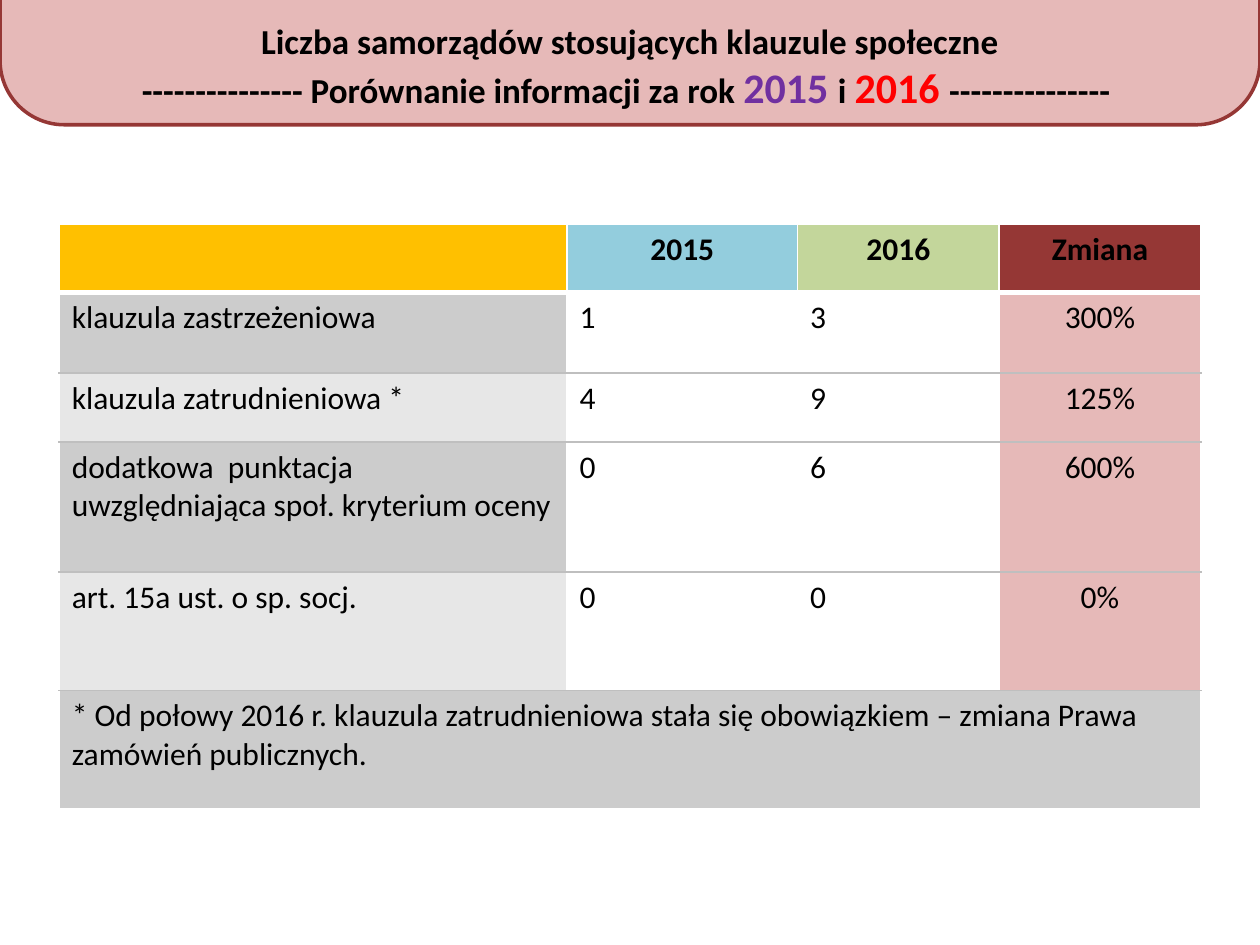
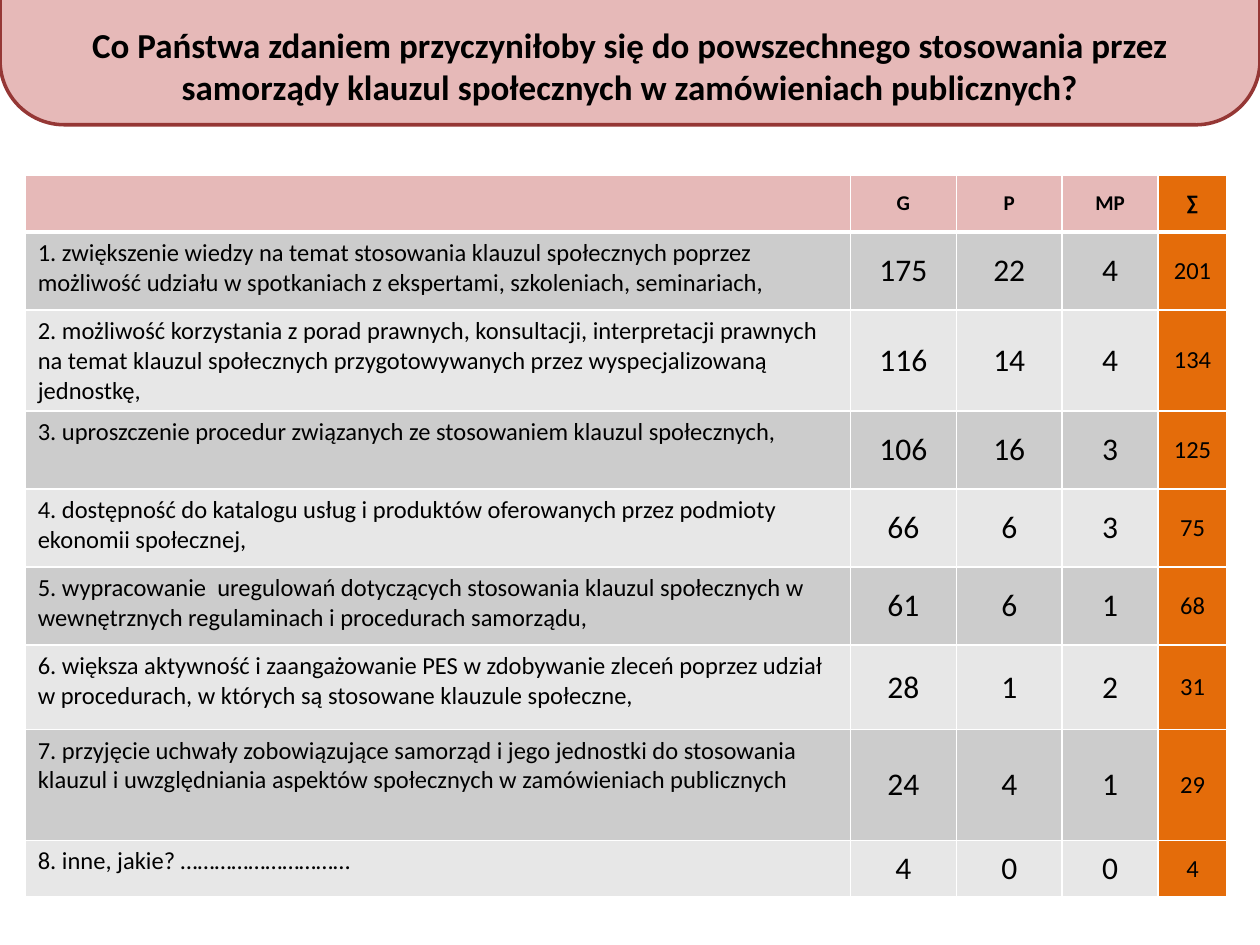
from dataclasses import dataclass

from lxml import etree
from pptx import Presentation
from pptx.dml import color
from pptx.enum import shapes, text
from pptx.oxml import ns
from pptx.util import Inches, Pt


@dataclass(frozen=True)
class Theme:
    font: str = "Calibri"
    ink: str = "000000"
    white: str = "FFFFFF"
    pink: str = "E6B9B8"
    maroon: str = "953735"
    amber: str = "FFC000"
    blue: str = "93CDDD"
    green: str = "C3D69B"
    orange: str = "E46C0A"
    purple: str = "7030A0"
    red: str = "FF0000"
    rule: str = "BFBFBF"
    bands: tuple = ("CCCCCC", "E7E7E7")
    title: int = 20
    year: int = 24
    figure: int = 18
    item: int = 14
    heading: int = 12


T = Theme()
CENTER = text.PP_ALIGN.CENTER
LEFT = text.PP_ALIGN.LEFT
MIDDLE = text.MSO_ANCHOR.MIDDLE
TOP = text.MSO_ANCHOR.TOP


def rgb(value):
    return color.RGBColor.from_string(value)


def style_run(r, size, ink=T.ink, bold=False):
    r.font.name = T.font
    r.font.size = Pt(size)
    r.font.bold = bold
    r.font.color.rgb = rgb(ink)


def set_borders(cell, **edges):
    """Each edge (L, R, T, B) is a (colour, points) pair."""
    tc_pr = cell._tc.get_or_add_tcPr()
    ordered = [side for side in "LRTB" if side in edges]
    for i, side in enumerate(ordered):
        ink, width = edges[side]
        ln = etree.Element(ns.qn(f"a:ln{side}"), w=str(Pt(width)))
        fill = etree.SubElement(ln, ns.qn("a:solidFill"))
        etree.SubElement(fill, ns.qn("a:srgbClr"), val=ink)
        tc_pr.insert(i, ln)


def fill_cell(cell, value, size, fill, align=LEFT, anchor=TOP, bold=False):
    cell.text = value
    cell.vertical_anchor = anchor
    cell.fill.solid()
    cell.fill.fore_color.rgb = rgb(fill)
    p = cell.text_frame.paragraphs[0]
    p.alignment = align
    for r in p.runs:
        style_run(r, size, bold=bold)


def add_table(s, box, cols, rows):
    x, y, w, h = (Inches(v) for v in box)
    tbl = s.shapes.add_table(len(rows), len(cols), x, y, w, h).table
    tbl.horz_banding = False
    for col, width in zip(tbl.columns, cols):
        col.width = Inches(width)
    for row, height in zip(tbl.rows, rows):
        row.height = Inches(height)
    return tbl


def header_band(s, box):
    x, y, w, h = (Inches(v) for v in box)
    sp = s.shapes.add_shape(shapes.MSO_SHAPE.ROUND_2_SAME_RECTANGLE, x, y, w, h)
    sp.adjustments[0] = 0.5
    sp.adjustments[1] = 0
    sp.rotation = 180
    sp.shadow.inherit = False
    sp.fill.solid()
    sp.fill.fore_color.rgb = rgb(T.pink)
    sp.line.color.rgb = rgb(T.maroon)
    sp.line.width = Pt(2)


def slide_title(s, box, lines):
    """Each line is a list of (text, size, colour) parts."""
    tf = s.shapes.add_textbox(*(Inches(v) for v in box)).text_frame
    tf.word_wrap = True
    tf.vertical_anchor = MIDDLE
    p = tf.paragraphs[0]
    p.alignment = CENTER
    for i, line in enumerate(lines):
        if i:
            p.add_line_break()
        for part, size, ink in line:
            r = p.add_run()
            r.text = part
            style_run(r, size, ink, bold=True)


def titled_slide(prs, lines):
    s = prs.slides.add_slide(prs.slide_layouts[6])
    header_band(s, (0, -0.03, 10, 1.02))
    slide_title(s, (0.5, -0.03, 9, 1.1), lines)
    return s


def comparison_table(s, box):
    headings = [("", T.amber), ("2015", T.blue), ("2016", T.green), ("Zmiana", T.maroon)]
    clauses = [
        ("klauzula zastrzeżeniowa", "1", "3", "300%"),
        ("klauzula zatrudnieniowa *", "4", "9", "125%"),
        ("dodatkowa  punktacja uwzględniająca społ. kryterium oceny", "0", "6", "600%"),
        ("art. 15a ust. o sp. socj.", "0", "0", "0%"),
    ]
    footnote = ("* Od połowy 2016 r. klauzula zatrudnieniowa stała się obowiązkiem"
                " – zmiana Prawa zamówień publicznych.")
    tbl = add_table(s, box, (4.03, 1.83, 1.6, 1.6), (0.54, 0.64, 0.55, 1.03, 0.94, 0.94))
    thin, thick, grey = (T.white, 1), (T.white, 3), (T.rule, 1)

    # Headings
    for c, (heading, fill) in enumerate(headings):
        cell = tbl.cell(0, c)
        fill_cell(cell, heading, T.figure, fill, CENTER, bold=True)
        set_borders(cell, L=thin, R=thin, T=thin, B=thick)

    # Clauses
    for n, clause in enumerate(clauses):
        fills = (T.bands[n % 2], T.white, T.white, T.pink)
        for c, (value, fill) in enumerate(zip(clause, fills)):
            cell = tbl.cell(n + 1, c)
            fill_cell(cell, value, T.figure, fill, CENTER if c == 3 else LEFT)
            set_borders(cell, T=grey if n else thick, B=grey)

    # Footnote across all columns
    last = len(clauses) + 1
    tbl.cell(last, 0).merge(tbl.cell(last, 3))
    fill_cell(tbl.cell(last, 0), footnote, T.figure, T.bands[0])
    for c in range(4):
        set_borders(tbl.cell(last, c), T=grey, B=thin)


def answers_table(s, box):
    headings = ("", "G", "P", "MP", "∑")
    answers = [
        ("zwiększenie wiedzy na temat stosowania klauzul społecznych poprzez możliwość "
         "udziału w spotkaniach z ekspertami, szkoleniach, seminariach,", 175, 22, 4),
        ("możliwość korzystania z porad prawnych, konsultacji, interpretacji prawnych na "
         "temat klauzul społecznych przygotowywanych przez wyspecjalizowaną jednostkę,",
         116, 14, 4),
        ("uproszczenie procedur związanych ze stosowaniem klauzul społecznych,", 106, 16, 3),
        ("dostępność do katalogu usług i produktów oferowanych przez podmioty ekonomii "
         "społecznej,", 66, 6, 3),
        ("wypracowanie  uregulowań dotyczących stosowania klauzul społecznych w "
         "wewnętrznych regulaminach i procedurach samorządu,", 61, 6, 1),
        ("większa aktywność i zaangażowanie PES w zdobywanie zleceń poprzez udział w "
         "procedurach, w których są stosowane klauzule społeczne,", 28, 1, 2),
        ("przyjęcie uchwały zobowiązujące samorząd i jego jednostki do stosowania klauzul "
         "i uwzględniania aspektów społecznych w zamówieniach publicznych", 24, 4, 1),
        ("inne, jakie? …………………………", 4, 0, 0),
    ]
    heights = [0.45] + [0.62] * 5 + [0.67, 0.88, 0.45]
    tbl = add_table(s, box, (6.55, 0.84, 0.84, 0.76, 0.55), heights)
    thin, thick = (T.white, 1), (T.white, 3)

    # Headings
    for c, heading in enumerate(headings):
        cell = tbl.cell(0, c)
        fill = T.orange if heading == "∑" else T.pink
        fill_cell(cell, heading, T.heading, fill, CENTER, MIDDLE, bold=True)
        set_borders(cell, L=thin, R=thin, T=thin, B=thick)

    # Answers, their counts and the row total
    for n, (answer, *counts) in enumerate(answers, 1):
        band = T.bands[(n - 1) % 2]
        fill_cell(tbl.cell(n, 0), f"{n}. {answer}", T.item, band)
        for c, count in enumerate(counts, 1):
            fill_cell(tbl.cell(n, c), str(count), T.figure, band, CENTER, MIDDLE)
        fill_cell(tbl.cell(n, 4), str(sum(counts)), T.item, T.orange, CENTER, MIDDLE)
        for c in range(5):
            set_borders(tbl.cell(n, c), L=thin, R=thin, T=thick if n == 1 else thin, B=thin)


def comparison_slide(prs):
    dashes = "-" * 15
    s = titled_slide(prs, [
        [("Liczba samorządów stosujących klauzule społeczne", T.title, T.ink)],
        [(f"{dashes} Porównanie informacji za rok ", T.title, T.ink),
         ("2015 ", T.year, T.purple), ("i ", T.title, T.ink),
         ("2016 ", T.year, T.red), (f"{dashes} ", T.title, T.ink)],
    ])
    comparison_table(s, (0.47, 1.78, 9.06, 4.64))


def answers_slide(prs):
    question = ("Co Państwa zdaniem przyczyniłoby się do powszechnego stosowania przez "
                "samorządy klauzul społecznych w zamówieniach publicznych?")
    s = titled_slide(prs, [[(question, T.title, T.ink)]])
    answers_table(s, (0.2, 1.39, 9.53, 5.74))


def main():
    prs = Presentation()
    prs.slide_width, prs.slide_height = Inches(10), Inches(7.5)
    comparison_slide(prs)
    answers_slide(prs)
    prs.save("out.pptx")


if __name__ == "__main__":
    main()
